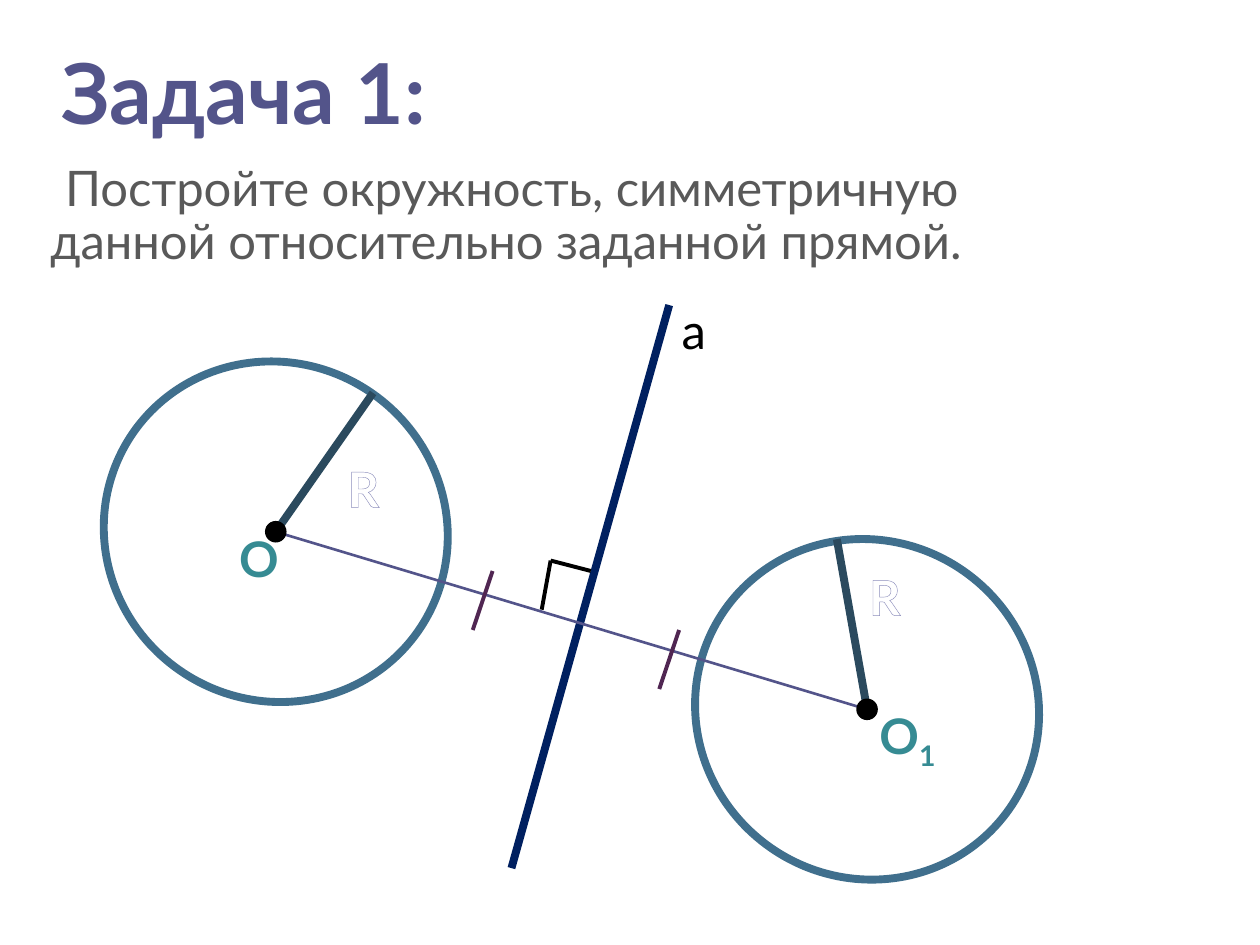
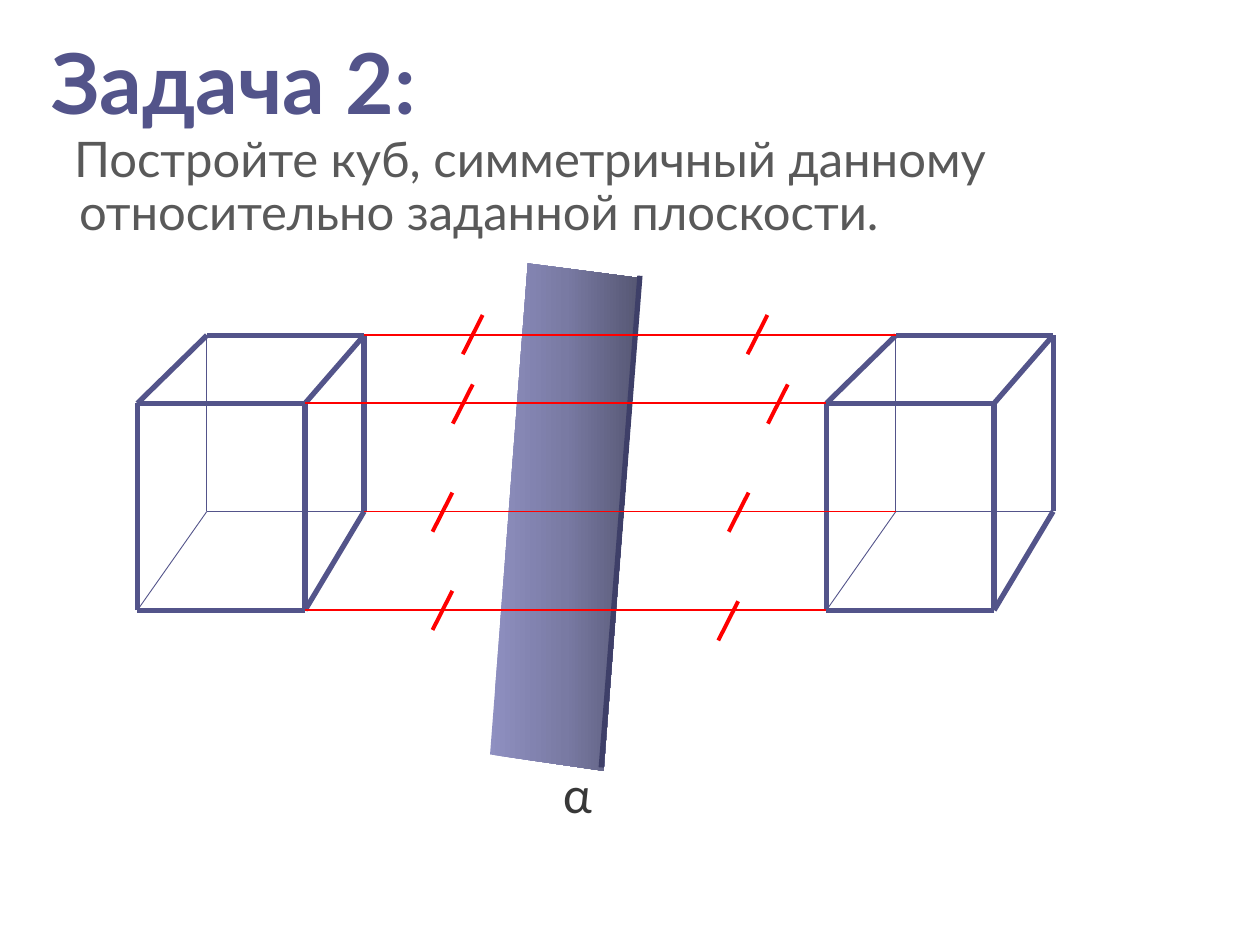
from copy import deepcopy
from typing import NamedTuple

from pptx import Presentation
from pptx.dml.color import RGBColor
from pptx.enum.shapes import MSO_CONNECTOR, MSO_SHAPE
from pptx.enum.text import MSO_ANCHOR, MSO_AUTO_SIZE, PP_ALIGN
from pptx.oxml.ns import qn
from pptx.slide import Slide
from pptx.util import Cm, Pt

FONT = "Lato"
HUES = {
    "title": "53548A", "body": "595959", "ring": "406F8D", "radius": "2B4A5E",
    "axis": "002060", "tick": "502652", "ink": "000000", "point": "368B93",
    "paper": "FFFFFF", "trim": "8D8EBC", "side": "3E3F68", "alpha": "383838",
    "ray": "FF0000", "light": "8F90C1", "mid": "797AA3", "dark": "555672",
}


class Dot(NamedTuple):
    x: float
    y: float


class Box(NamedTuple):
    x: float
    y: float
    w: float
    h: float


class Pen(NamedTuple):
    hue: str
    width: float


class Head(NamedTuple):
    title: str
    title_box: Box
    body: str
    body_box: Box
    indent: float


class Label(NamedTuple):
    text: str
    at: Dot
    hue: str
    bold: bool = False
    sub: str = ""
    trim: str = ""


class Ring(NamedTuple):
    mid: Dot
    rim: Dot


EDGE = Pen("title", 3)
HIDDEN = Pen("title", 0.5)
RAY = Pen("ray", 1)

HEADS = (
    Head("Задача 1:", Box(0.99, 0, 18.11, 2.97),
         "Постройте окружность, симметричную данной относительно заданной прямой.",
         Box(0, 3.18, 23.01, 3.38), 0.3),
    Head("Задача 2:", Box(0.79, 0, 18.11, 2.77),
         "Постройте куб, симметричный данному относительно заданной плоскости.",
         Box(0.58, 2.59, 23.22, 3.58), -0.1),
)
RINGS = (
    Ring(Dot(5.56, 10.72), Dot(7.52, 7.92)),
    Ring(Dot(17.48, 14.3), Dot(16.87, 10.87)),
)
LABELS = (
    Label("R", Dot(6.76, 9.12), "paper", True, trim="trim"),
    Label("О", Dot(4.57, 10.52), "point", True),
    Label("а", Dot(13.49, 5.94), "ink"),
    Label("R", Dot(17.27, 11.3), "paper", True, trim="trim"),
    Label("О", Dot(17.48, 14.1), "point", True, sub="1"),
)
TICKS = (Dot(9.93, 11.51), Dot(13.69, 12.7))
CORNER = (Dot(11.91, 11.51), Dot(11.1, 11.3), Dot(10.92, 12.29))

FRONT = (Dot(2.77, 8.13), Dot(6.15, 8.13), Dot(6.15, 12.3), Dot(2.77, 12.3))
BACK = (Dot(4.17, 6.76), Dot(7.34, 6.76), Dot(7.34, 10.31), Dot(4.17, 10.31))
FAR = 3  # index of the back corner whose edges are hidden
SHIFT = 13.89
PLANE = (Dot(10.64, 5.31), Dot(12.93, 5.61), Dot(12.17, 15.54), Dot(9.88, 15.21))
SHADES = ((0, "light"), (0.5, "mid"), (1, "dark"))
SLASHES = (
    Dot(9.73, 6.35), Dot(15.47, 6.35), Dot(9.53, 7.75), Dot(15.88, 7.75),
    Dot(9.12, 9.93), Dot(15.09, 9.93), Dot(9.12, 11.91), Dot(14.88, 12.12),
)


def color(name: str) -> RGBColor:
    return RGBColor.from_string(HUES[name])


def style(para, size: float, hue: str, bold: bool = False) -> None:
    font = para.font
    font.name, font.size, font.bold = FONT, Pt(size), bold
    font.color.rgb = color(hue)


def place(shape, box: Box) -> None:
    shape.left, shape.top, shape.width, shape.height = map(Cm, box)


def add_head(deck, head: Head) -> Slide:
    """Add a slide with its title and its task text."""
    slide = deck.slides.add_slide(deck.slide_layouts[1])
    title, body = slide.placeholders
    place(title, head.title_box)
    place(body, head.body_box)
    title.text_frame.text, body.text_frame.text = head.title, head.body
    for shape, anchor in ((title, MSO_ANCHOR.BOTTOM), (body, MSO_ANCHOR.TOP)):
        shape.text_frame.auto_size = MSO_AUTO_SIZE.NONE
        shape.text_frame.vertical_anchor = anchor

    para = title.text_frame.paragraphs[0]
    para.alignment, para.line_spacing = PP_ALIGN.LEFT, 0.8
    style(para, 48, "title", True)

    para = body.text_frame.paragraphs[0]
    para.line_spacing, para.space_before = 0.9, Pt(0)
    props = para._p.get_or_add_pPr()
    props.set("marL", str(Cm(0.76)))
    props.set("indent", str(Cm(head.indent)))
    props.append(props.makeelement(qn("a:buNone"), {}))
    style(para, 28, "body")
    return slide


def add_line(slide: Slide, start: Dot, end: Dot, pen: Pen) -> None:
    line = slide.shapes.add_connector(
        MSO_CONNECTOR.STRAIGHT, *map(Cm, (*start, *end)))
    line.line.color.rgb = color(pen.hue)
    line.line.width = Pt(pen.width)
    props = line._element.spPr
    props.append(props.makeelement(qn("a:effectLst"), {}))


def add_ticks(slide: Slide, starts: tuple[Dot, ...], rise: float, pen: Pen) -> None:
    for dot in starts:
        add_line(slide, dot, Dot(dot.x - 0.4, dot.y + rise), pen)


def add_oval(slide: Slide, mid: Dot, w: float, h: float, fill: str, pen: Pen):
    oval = slide.shapes.add_shape(
        MSO_SHAPE.OVAL, *map(Cm, (mid.x - w / 2, mid.y - h / 2, w, h)))
    oval.shadow.inherit = False
    oval.fill.solid()
    oval.fill.fore_color.rgb = color(fill)
    oval.line.color.rgb = color(pen.hue)
    oval.line.width = Pt(pen.width)
    return oval


def add_label(slide: Slide, label: Label) -> None:
    box = slide.shapes.add_textbox(*map(Cm, (*label.at, 1.8, 1.45)))
    para = box.text_frame.paragraphs[0]
    run = para.add_run()
    run.text = label.text
    style(para, 28, label.hue, label.bold)
    if label.sub:
        sub = para.add_run()
        sub.text = label.sub
        sub._r.get_or_add_rPr().set("baseline", "-25000")
    if label.trim:
        props = run._r.get_or_add_rPr()
        line = props.makeelement(qn("a:ln"), {"w": str(Pt(2.48))})
        fill = line.makeelement(qn("a:solidFill"), {})
        fill.append(fill.makeelement(qn("a:srgbClr"), {"val": HUES[label.trim]}))
        line.append(fill)
        props.insert(0, line)
        run.font.color.rgb = color(label.hue)


def add_plane(slide: Slide) -> None:
    first, *rest = [tuple(map(Cm, dot)) for dot in PLANE]
    path = slide.shapes.build_freeform(*first)
    path.add_line_segments(rest)
    plane = path.convert_to_shape()
    plane.shadow.inherit = False
    plane.line.fill.background()
    plane.fill.gradient()
    plane.fill.gradient_angle = 0
    stops = plane._element.spPr.find(".//" + qn("a:gsLst"))
    stops.insert(1, deepcopy(stops[0]))
    for stop, (spot, hue) in zip(plane.fill.gradient_stops, SHADES):
        stop.position = spot
        stop.color.rgb = color(hue)


def add_cube(slide: Slide, shift: float) -> None:
    front, back = ([Dot(dot.x + shift, dot.y) for dot in face]
                   for face in (FRONT, BACK))
    for i in range(4):
        j = (i + 1) % 4
        add_line(slide, back[i], back[j], HIDDEN if FAR in (i, j) else EDGE)
        add_line(slide, front[i], back[i], HIDDEN if i == FAR else EDGE)
        add_line(slide, front[i], front[j], EDGE)


def draw_rings(slide: Slide) -> None:
    for ring in RINGS:
        oval = add_oval(slide, ring.mid, 7, 6.8, "paper", Pen("ring", 4.5))
        oval.rotation = 35
        add_line(slide, ring.rim, ring.mid, Pen("radius", 4.5))
    add_line(slide, Dot(13.49, 6.15), Dot(10.31, 17.5), Pen("axis", 4.5))
    add_line(slide, RINGS[0].mid, RINGS[1].mid, Pen("title", 1.5))
    for ring in RINGS:
        add_oval(slide, ring.mid, 0.4, 0.4, "ink", Pen("ink", 1))
    for label in LABELS:
        add_label(slide, label)
    add_ticks(slide, TICKS, 1.19, Pen("tick", 2.25))
    for start, end in zip(CORNER, CORNER[1:]):
        add_line(slide, start, end, Pen("ink", 2.25))


def draw_cubes(slide: Slide) -> None:
    add_plane(slide)
    add_line(slide, Dot(12.9, 5.56), Dot(12.12, 15.47), Pen("side", 3))
    add_label(slide, Label("α", Dot(11.1, 15.29), "alpha"))
    for shift in (0, SHIFT):
        add_cube(slide, shift)
    for face in (FRONT, BACK):
        for left, right in ((0, 1), (3, 2)):
            end = Dot(face[left].x + SHIFT, face[left].y)
            add_line(slide, face[right], end, RAY)
    add_ticks(slide, SLASHES, 0.79, Pen("ray", 2.25))


def main() -> None:
    deck = Presentation()
    deck.slide_width, deck.slide_height = Cm(25.4), Cm(19.05)
    for head, draw in zip(HEADS, (draw_rings, draw_cubes)):
        draw(add_head(deck, head))
    deck.save("out.pptx")


if __name__ == "__main__":
    main()
